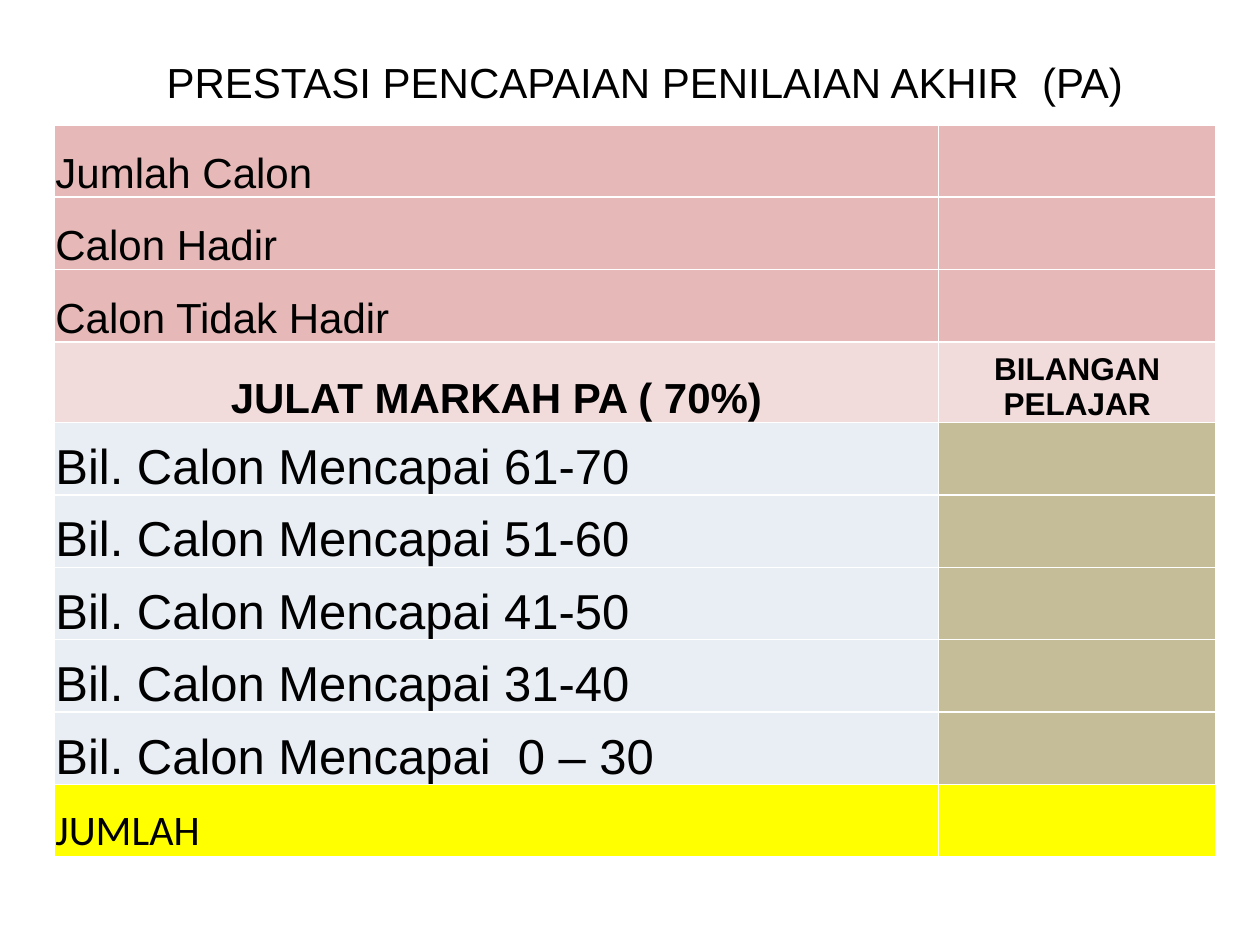
"""Build a slide with a table of final assessment results."""
from pptx import Presentation
from pptx import util as u
from pptx.dml.color import RGBColor
from pptx.enum import text

TITLE = "PRESTASI PENCAPAIAN PENILAIAN AKHIR  (PA)"
COUNTS = ["Jumlah Calon", "Calon Hadir", "Calon Tidak Hadir"]
HEAD = ["JULAT MARKAH PA ( 70%)", "BILANGAN PELAJAR"]
BANDS = ["61-70", "51-60", "41-50", "31-40", " 0 – 30"]
TOTAL = "JUMLAH"
WIDTHS = [7.02, 2.2]
HIGH, HEAD_HIGH = 5.81, 0.64
LEFT, CENTER = text.PP_ALIGN.LEFT, text.PP_ALIGN.CENTER


def tint(code):
    return RGBColor.from_string(code)


def write(frame, words, size, font="Arial", bold=False, align=LEFT):
    para = frame.paragraphs[0]
    para.alignment = align
    run = para.add_run()
    run.text = words
    run.font.size = u.Pt(size)
    run.font.name = font
    run.font.bold = bold
    run.font.color.rgb = tint("000000")


def fill(cell, code, words="", size=24, **style):
    cell.fill.solid()
    cell.fill.fore_color.rgb = tint(code)
    if words:
        cell.vertical_anchor = text.MSO_ANCHOR.BOTTOM
        cell.margin_left = cell.margin_right = cell.margin_top = u.Inches(0.01)
        cell.margin_bottom = 0
        write(cell.text_frame, words, size, **style)


def main():
    deck = Presentation()
    deck.slide_width, deck.slide_height = u.Inches(10), u.Inches(7.5)
    slide = deck.slides.add_slide(deck.slide_layouts[5])

    title = slide.shapes.title
    title.left, title.top = u.Inches(0.59), u.Inches(0.21)
    title.width, title.height = u.Inches(9.06), u.Inches(0.87)
    title.text_frame.vertical_anchor = text.MSO_ANCHOR.MIDDLE
    write(title.text_frame, TITLE, 24, align=CENTER)

    rows = [("E6B9B8", "E6B9B8", name, 24, "Arial") for name in COUNTS]
    rows += [None]
    rows += [("E9EDF4", "C4BD97", f"Bil. Calon Mencapai {band}", 28, "Arial")
             for band in BANDS]
    rows += [("FFFF00", "FFFF00", TOTAL, 24, "Calibri")]

    grid = slide.shapes.add_table(
        len(rows), len(WIDTHS), u.Inches(0.43), u.Inches(0.99),
        u.Inches(sum(WIDTHS)), u.Inches(HIGH)).table
    grid.first_row = grid.horz_banding = False
    for col, width in zip(grid.columns, WIDTHS):
        col.width = u.Inches(width)
    step = (HIGH - HEAD_HIGH) / (len(rows) - 1)

    for line, row in zip(grid.rows, rows):
        line.height = u.Inches(step if row else HEAD_HIGH)
        name, count = line.cells
        if row:
            shade, blank, words, size, font = row
            fill(name, shade, words, size, font=font)
            fill(count, blank)
        else:
            for cell, words, size in zip((name, count), HEAD, (24, 18)):
                fill(cell, "F2DCDB", words, size, bold=True, align=CENTER)

    deck.save("out.pptx")


if __name__ == "__main__":
    main()
